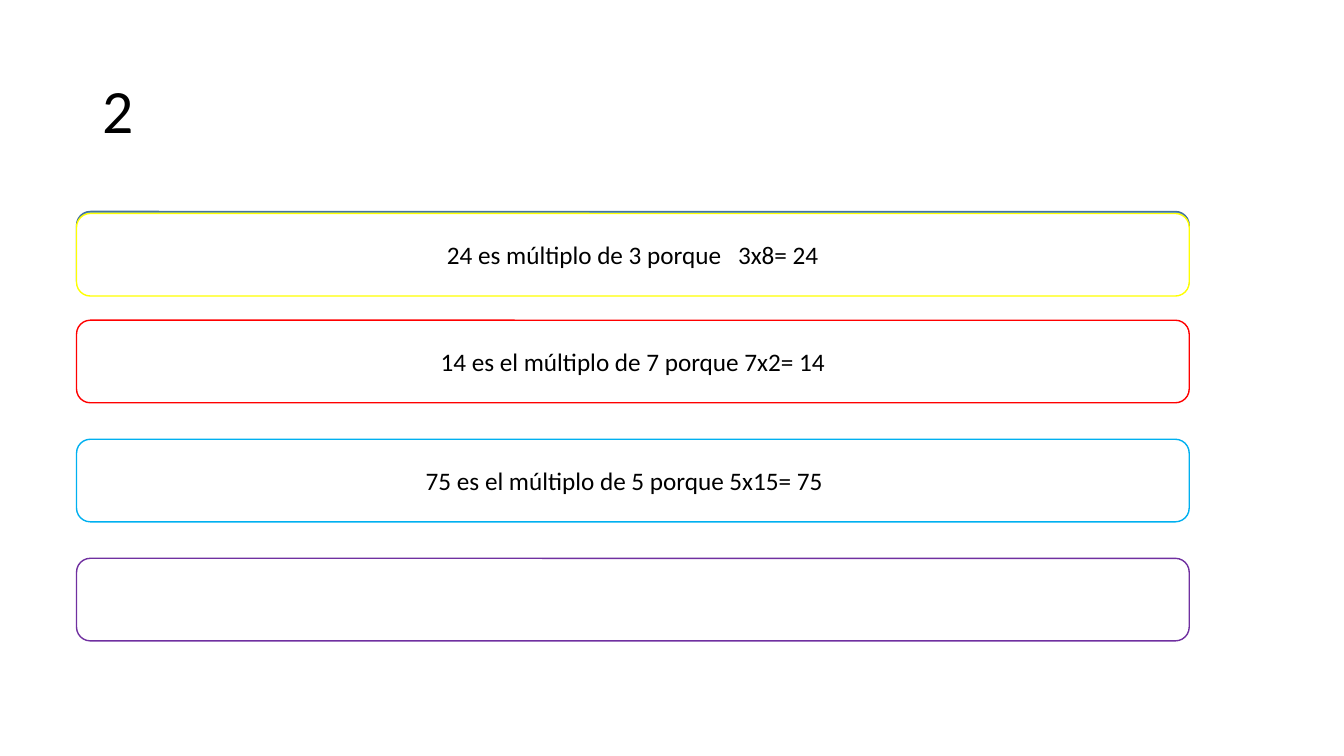
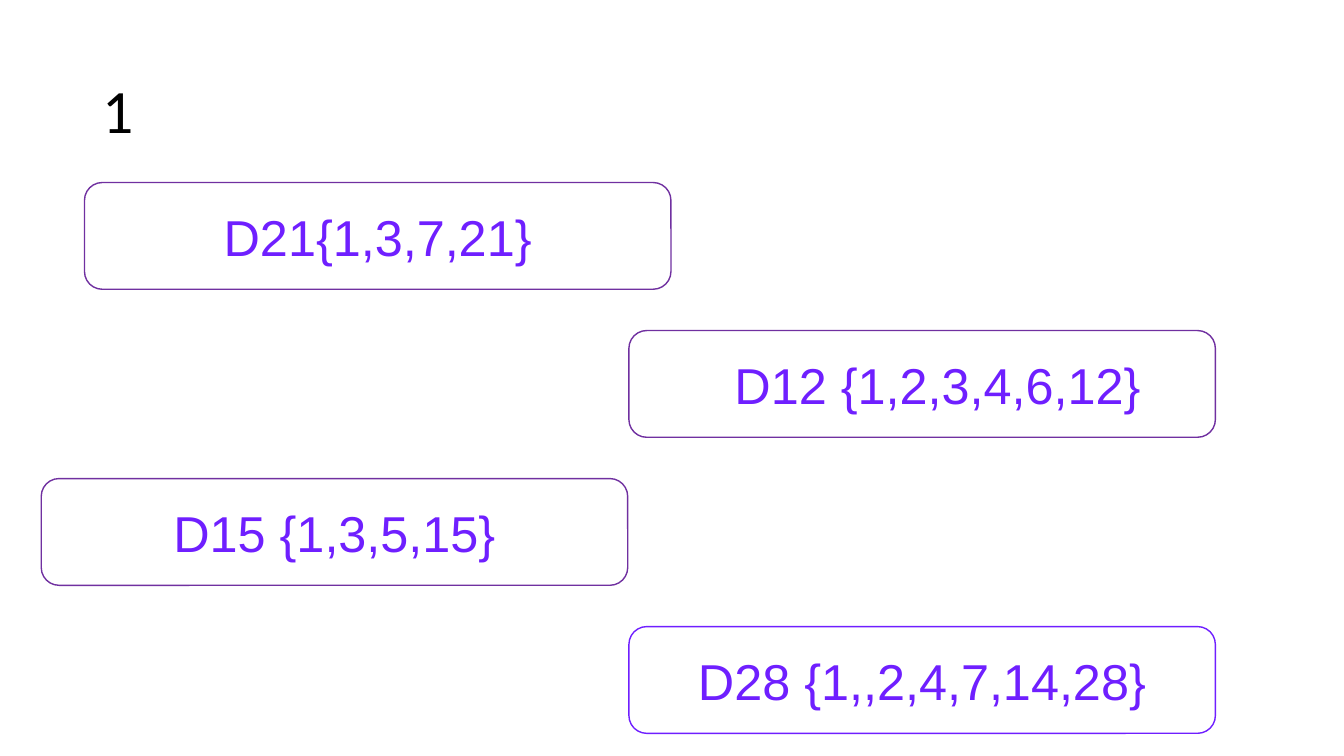
"""Builds two slides about multiples and divisors in rounded outlined boxes."""
import pptx
import pptx.dml.color
import pptx.enum.shapes
import pptx.enum.text
import pptx.util

Cm, Pt = pptx.util.Cm, pptx.util.Pt
ALIGN, ANCHOR = pptx.enum.text.PP_ALIGN, pptx.enum.text.MSO_ANCHOR

COLOURS = {
    "black": "000000", "white": "FFFFFF", "blue": "5B9BD5", "navy": "43739E",
    "yellow": "FFFF00", "red": "FF0000", "sky": "00B0F0", "purple": "7030A0",
    "violet": "6F1FFF",
}
INSET = 0.25

MULTIPLES = {
    "title": "2",
    "size": (28.04, 2.08),
    "font": ("Calibri", 18, "black"),
    "boxes": [
        {"at": (1.93, 5.33), "fill": "blue", "line": "navy"},
        {"at": (1.93, 5.38), "line": "yellow", "text": "24 es múltiplo de 3 porque   3x8= 24"},
    ] + [
        {"at": (1.93, 8.07 + 3 * row), "line": line, "text": text, "right": right}
        for row, (line, text, right) in enumerate([
            ("red", "14 es el múltiplo de 7 porque 7x2= 14", INSET),
            ("sky", "75 es el múltiplo de 5 porque 5x15= 75", 0.68),
            ("purple", "", INSET),
        ])
    ],
}
DIVISORS = {
    "title": "1",
    "size": (14.78, 2.69),
    "font": ("Arial", 36, "violet"),
    "boxes": [
        {"at": (left, 4.6 + 3.73 * row), "fill": fill, "line": line, "text": text, "left": inset}
        for row, (left, fill, line, text, inset) in enumerate([
            (2.13, None, "purple", "D21{1,3,7,21}", INSET),
            (15.85, "white", "purple", "D12 {1,2,3,4,6,12}", 1.03),
            (1.04, None, "purple", "D15 {1,3,5,15}", INSET),
            (15.85, "white", "violet", "D28 {1,,2,4,7,14,28}", INSET),
        ])
    ],
}


def colour(name):
    return pptx.dml.color.RGBColor.from_string(COLOURS[name])


def write(frame, text, font, align):
    name, size, shade = font
    frame.word_wrap = True
    frame.vertical_anchor = ANCHOR.MIDDLE
    para = frame.paragraphs[0]
    para.text = text
    para.alignment = align
    para.font.name, para.font.size = name, Pt(size)
    para.font.color.rgb = colour(shade)
    return para


def add_title(page, text):
    title = page.shapes.title
    title.left, title.top, title.width, title.height = map(Cm, (2.33, 1.01, 29.21, 3.68))
    title.text_frame.auto_size = pptx.enum.text.MSO_AUTO_SIZE.NONE
    para = write(title.text_frame, text, ("Calibri", 44, "black"), ALIGN.LEFT)
    para.line_spacing = 0.9


def add_box(page, item, size, font):
    box = page.shapes.add_shape(
        pptx.enum.shapes.MSO_SHAPE.ROUNDED_RECTANGLE, *map(Cm, item["at"] + size))
    box.shadow.inherit = False
    fill = item.get("fill", "white")
    if fill:
        box.fill.solid()
        box.fill.fore_color.rgb = colour(fill)
    else:
        box.fill.background()
    box.line.color.rgb = colour(item["line"])
    box.line.width = Pt(1)
    if item.get("text"):
        box.text_frame.margin_left = Cm(item.get("left", INSET))
        box.text_frame.margin_right = Cm(item.get("right", INSET))
        write(box.text_frame, item["text"], font, ALIGN.CENTER)


def main():
    deck = pptx.Presentation()
    deck.slide_width, deck.slide_height = Cm(33.87), Cm(19.05)
    for content in (MULTIPLES, DIVISORS):
        page = deck.slides.add_slide(deck.slide_layouts[5])
        add_title(page, content["title"])
        for item in content["boxes"]:
            add_box(page, item, content["size"], content["font"])
    deck.save("out.pptx")


if __name__ == "__main__":
    main()
